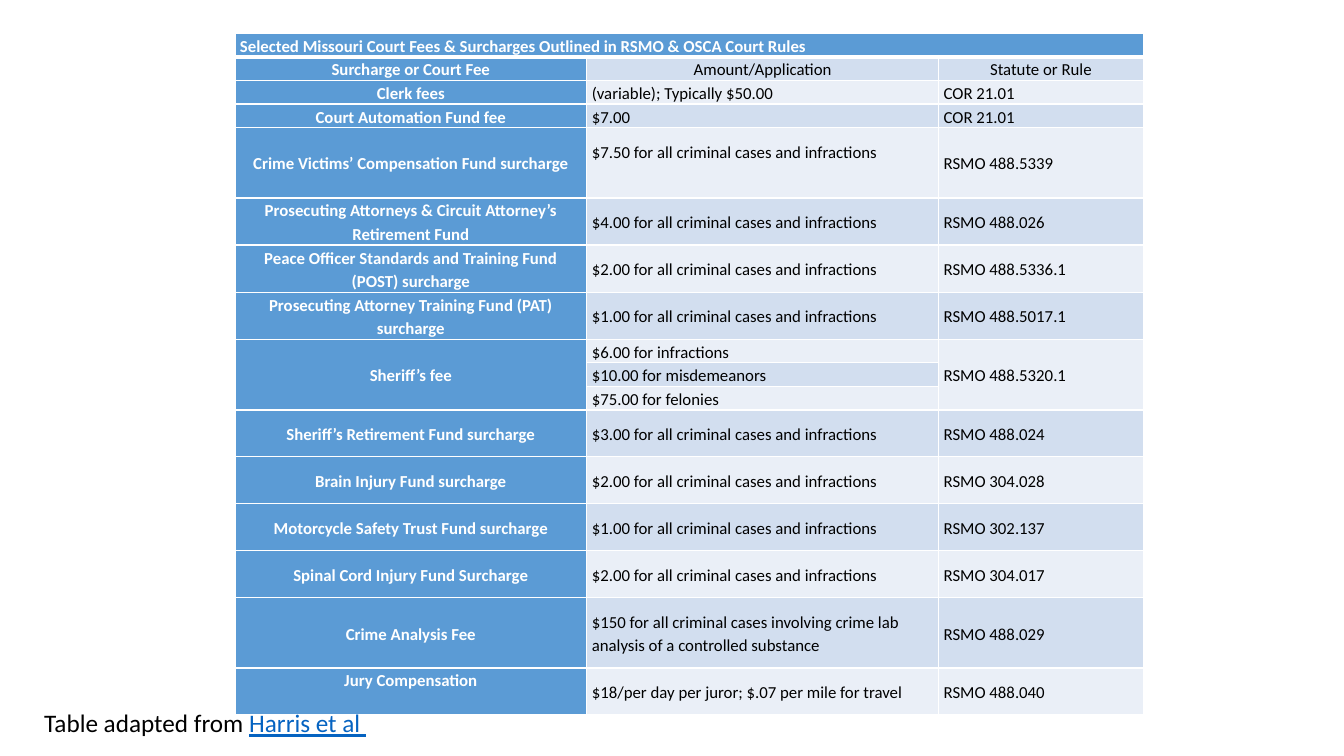
from lxml.etree import SubElement
from pptx import Presentation
from pptx.dml.color import RGBColor
from pptx.enum.text import MSO_ANCHOR, PP_ALIGN
from pptx.oxml.ns import qn
from pptx.util import Inches, Pt

COLORS = {
    "label": "5B9BD5",
    "dark_band": "D2DEEF",
    "light_band": "EAEFF7",
    "white": "FFFFFF",
    "black": "000000",
    "link": "0563C1",
}
FONT = "Calibri"
COLUMN_WIDTHS = [3.49, 3.49, 2.03]
TABLE_HEIGHT = 6.75
ALL_CASES = "for all criminal cases and infractions"
TITLE = "Selected Missouri Court Fees & Surcharges Outlined in RSMO & OSCA Court Rules"

# Height in text lines, then fee, amount and rule
FEES = [
    (1, TITLE, "", ""),
    (1, "Surcharge or Court Fee", "Amount/Application", "Statute or Rule"),
    (1, "Clerk fees", "(variable); Typically $50.00", "COR 21.01"),
    (1, "Court Automation Fund fee", "$7.00", "COR 21.01"),
    (3, "Crime Victims’ Compensation Fund surcharge", f"$7.50 {ALL_CASES}", "RSMO 488.5339"),
    (2, "Prosecuting Attorneys & Circuit Attorney’s Retirement Fund",
     f"$4.00 {ALL_CASES}", "RSMO 488.026"),
    (2, "Peace Officer Standards and Training Fund (POST) surcharge",
     f"$2.00 {ALL_CASES}", "RSMO 488.5336.1"),
    (2, "Prosecuting Attorney Training Fund (PAT) surcharge",
     f"$1.00 {ALL_CASES}", "RSMO 488.5017.1"),
    (1, "Sheriff’s fee", "$6.00 for infractions", "RSMO 488.5320.1"),
    (1, "", "$10.00 for misdemeanors", ""),
    (1, "", "$75.00 for felonies", ""),
    (2, "Sheriff’s Retirement Fund surcharge", f"$3.00 {ALL_CASES}", "RSMO 488.024"),
    (2, "Brain Injury Fund surcharge", f"$2.00 {ALL_CASES}", "RSMO 304.028"),
    (2, "Motorcycle Safety Trust Fund surcharge", f"$1.00 {ALL_CASES}", "RSMO 302.137"),
    (2, "Spinal Cord Injury Fund Surcharge", f"$2.00 {ALL_CASES}", "RSMO 304.017"),
    (3, "Crime Analysis Fee",
     "$150 for all criminal cases involving crime lab analysis of a controlled substance",
     "RSMO 488.029"),
    (2, "Jury Compensation", "$18/per day per juror; $.07 per mile for travel", "RSMO 488.040"),
]
TITLE_ROW, HEADER_ROW, VICTIMS_ROW, SHERIFF_ROW = 0, 1, 4, 8
JURY_ROW = len(FEES) - 1


def rgb(name):
    return RGBColor.from_string(COLORS[name])


def format_run(run, size, color, bold=False):
    run.font.name = FONT
    run.font.size = Pt(size)
    run.font.bold = bold
    run.font.color.rgb = rgb(color)


def set_borders(cell, top=1, bottom=1):
    properties = cell._tc.get_or_add_tcPr()
    for side, width in (("L", 1), ("R", 1), ("T", top), ("B", bottom)):
        line = SubElement(properties, qn(f"a:ln{side}"), w=str(Pt(width)))
        fill = SubElement(line, qn("a:solidFill"))
        SubElement(fill, qn("a:srgbClr"), val=COLORS["white"])


def fill_cell(cell, text, row, column):
    is_label = column == 0
    set_borders(cell, top=3 if row == HEADER_ROW else 1, bottom=3 if row == TITLE_ROW else 1)
    band = "dark_band" if row % 2 else "light_band"
    cell.fill.solid()
    cell.fill.fore_color.rgb = rgb("label" if is_label or row == TITLE_ROW else band)
    cell.margin_left = cell.margin_right = Inches(0.05)
    cell.margin_top = cell.margin_bottom = 0
    at_top = is_label and row in (TITLE_ROW, HEADER_ROW, JURY_ROW)
    cell.vertical_anchor = MSO_ANCHOR.TOP if at_top else MSO_ANCHOR.MIDDLE
    if not text:
        return
    cell.text_frame.text = text
    paragraph = cell.text_frame.paragraphs[0]
    paragraph.line_spacing = 1.15
    centered = row == HEADER_ROW or (is_label and row != TITLE_ROW)
    paragraph.alignment = PP_ALIGN.CENTER if centered else PP_ALIGN.LEFT
    format_run(paragraph.runs[0], 12, "white" if is_label else "black", bold=is_label)


def add_fee_table(slide):
    frame = slide.shapes.add_table(
        len(FEES), len(COLUMN_WIDTHS), Inches(2.33), Inches(0.33),
        Inches(sum(COLUMN_WIDTHS)), Inches(TABLE_HEIGHT))
    table = frame.table
    table.first_row = table.horz_banding = False
    for column, width in enumerate(COLUMN_WIDTHS):
        table.columns[column].width = Inches(width)

    line_height = Inches(TABLE_HEIGHT / sum(fee[0] for fee in FEES))
    for row, (lines, *texts) in enumerate(FEES):
        table.rows[row].height = line_height * lines
        for column, text in enumerate(texts):
            fill_cell(table.cell(row, column), text, row, column)

    # This amount sits half a line above the middle
    table.cell(VICTIMS_ROW, 1).margin_bottom = line_height

    # Title across all columns; sheriff's fee over three amounts
    table.cell(TITLE_ROW, 0).merge(table.cell(TITLE_ROW, 2))
    for column in (0, 2):
        table.cell(SHERIFF_ROW, column).merge(table.cell(SHERIFF_ROW + 2, column))


def add_source_note(slide):
    box = slide.shapes.add_textbox(Inches(0.34), Inches(6.97), Inches(4.46), Inches(0.4))
    box.text_frame.word_wrap = True
    box.text_frame.text = "Table adapted from "
    paragraph = box.text_frame.paragraphs[0]
    format_run(paragraph.runs[0], 18, "black")
    author = paragraph.add_run()
    author.text = "Harris et al "
    format_run(author, 18, "link")
    author.font.underline = True


def main():
    presentation = Presentation()
    presentation.slide_width = Inches(13.33)
    presentation.slide_height = Inches(7.5)
    slide = presentation.slides.add_slide(presentation.slide_layouts[6])
    add_fee_table(slide)
    add_source_note(slide)
    presentation.save("out.pptx")


if __name__ == "__main__":
    main()
